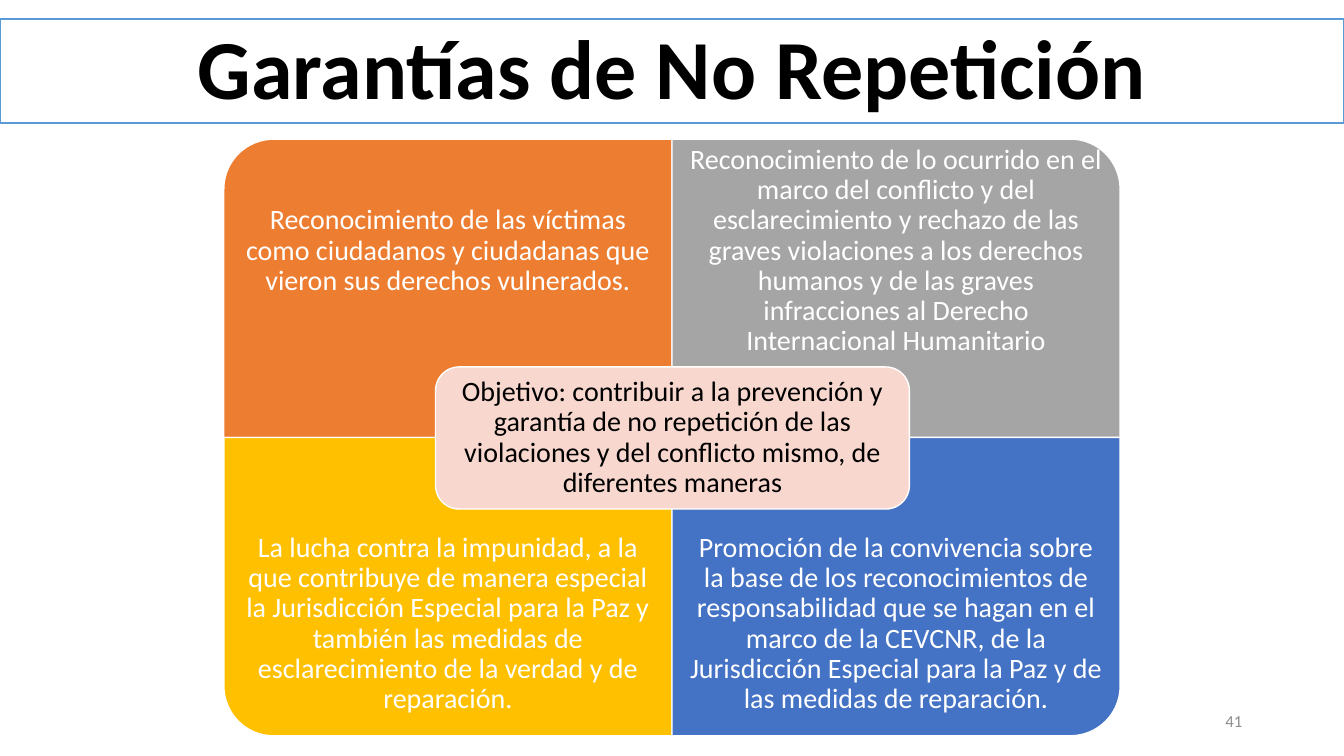
"""Build the slide on guarantees of non-repetition."""
from pptx import Presentation
from pptx import util as u
from pptx.dml.color import RGBColor
from pptx.enum import shapes, text

WHITE = RGBColor(255, 255, 255)
BLACK = RGBColor(0, 0, 0)
GRAY = RGBColor(0x8C, 0x8C, 0x8C)
SKY = RGBColor(0x5B, 0x9B, 0xD5)
PINK = RGBColor(0xF8, 0xD7, 0xCE)
ORANGE = RGBColor(0xED, 0x7D, 0x31)
SILVER = RGBColor(0xA5, 0xA5, 0xA5)
GOLD = RGBColor(0xFF, 0xC0, 0)
BLUE = RGBColor(0x44, 0x72, 0xC4)

TITLE = "Garantías de No Repetición"
NUMBER = "41"
GOAL = ("Objetivo: contribuir a la prevención y garantía de no repetición de las "
        "violaciones y del conflicto mismo, de diferentes maneras")
PANELS = [
    ("Reconocimiento de las víctimas como ciudadanos y ciudadanas que vieron sus "
     "derechos vulnerados.", ORANGE, 270),
    ("Reconocimiento de lo ocurrido en el marco del conflicto y del esclarecimiento y "
     "rechazo de las graves violaciones a los derechos humanos y de las graves "
     "infracciones al Derecho Internacional Humanitario", SILVER, 0),
    ("La lucha contra la impunidad, a la que contribuye de manera especial la "
     "Jurisdicción Especial para la Paz y también las medidas de esclarecimiento de la "
     "verdad y de reparación.", GOLD, 180),
    ("Promoción de la convivencia sobre la base de los reconocimientos de "
     "responsabilidad que se hagan en el marco de la CEVCNR, de la Jurisdicción "
     "Especial para la Paz y de las medidas de reparación.", BLUE, 90),
]
LEFT, TOP, WIDE, HIGH, BODY = 2.22, 1.38, 4.445, 2.96, 2.22

deck = Presentation()
deck.slide_width, deck.slide_height = u.Inches(13.33), u.Inches(7.5)
slide = deck.slides.add_slide(deck.slide_layouts[6])


def add_box(kind, x, y, w, h, fill, line=WHITE, turn=0):
    box = slide.shapes.add_shape(kind, *map(u.Inches, (x, y, w, h)))
    box.shadow.inherit = False
    box.fill.solid()
    box.fill.fore_color.rgb = fill
    box.line.color.rgb = line
    box.line.width = u.Pt(1)
    box.rotation = turn
    return box


def add_text(words, x, y, w, h, size=20, color=WHITE, bold=False, inset=(0.16, 0.16),
             align=text.PP_ALIGN.CENTER, anchor=text.MSO_ANCHOR.MIDDLE, space=0.9, box=None):
    box = box or slide.shapes.add_textbox(*map(u.Inches, (x, y, w, h)))
    frame = box.text_frame
    frame.word_wrap = True
    frame.vertical_anchor = anchor
    frame.margin_left = frame.margin_right = u.Inches(inset[0])
    frame.margin_top = frame.margin_bottom = u.Inches(inset[1])
    para = frame.paragraphs[0]
    para.alignment = align
    para.line_spacing = space
    run = para.add_run()
    run.text = words
    run.font.name = "Calibri"
    run.font.size = u.Pt(size)
    run.font.bold = bold
    run.font.color.rgb = color


head = (0, 0.19, 13.33, 1.03)
add_text(TITLE, *head, size=60, color=BLACK, bold=True, inset=(0.1, 0.05),
         anchor=text.MSO_ANCHOR.BOTTOM,
         box=add_box(shapes.MSO_SHAPE.RECTANGLE, *head, WHITE, SKY))
add_text(NUMBER, 9.42, 6.95, 3, 0.4, size=12, color=GRAY, inset=(0.1, 0.05),
         align=text.PP_ALIGN.RIGHT, space=1)

for i, (words, fill, turn) in enumerate(PANELS):
    row, col = divmod(i, 2)
    x, y = LEFT + col * WIDE, TOP + row * HIGH
    w, h = (HIGH, WIDE) if turn % 180 else (WIDE, HIGH)
    add_box(shapes.MSO_SHAPE.ROUND_1_RECTANGLE, x + (WIDE - w) / 2, y + (HIGH - h) / 2,
            w, h, fill, turn=turn)
    add_text(words, x, y + row * (HIGH - BODY), WIDE, BODY)

add_box(shapes.MSO_SHAPE.ROUNDED_RECTANGLE, 4.32, 3.64, 4.7, 1.41, PINK)
add_text(GOAL, 4.39, 3.71, 4.56, 1.27, color=BLACK, inset=(0.08, 0.08))

deck.save("out.pptx")
